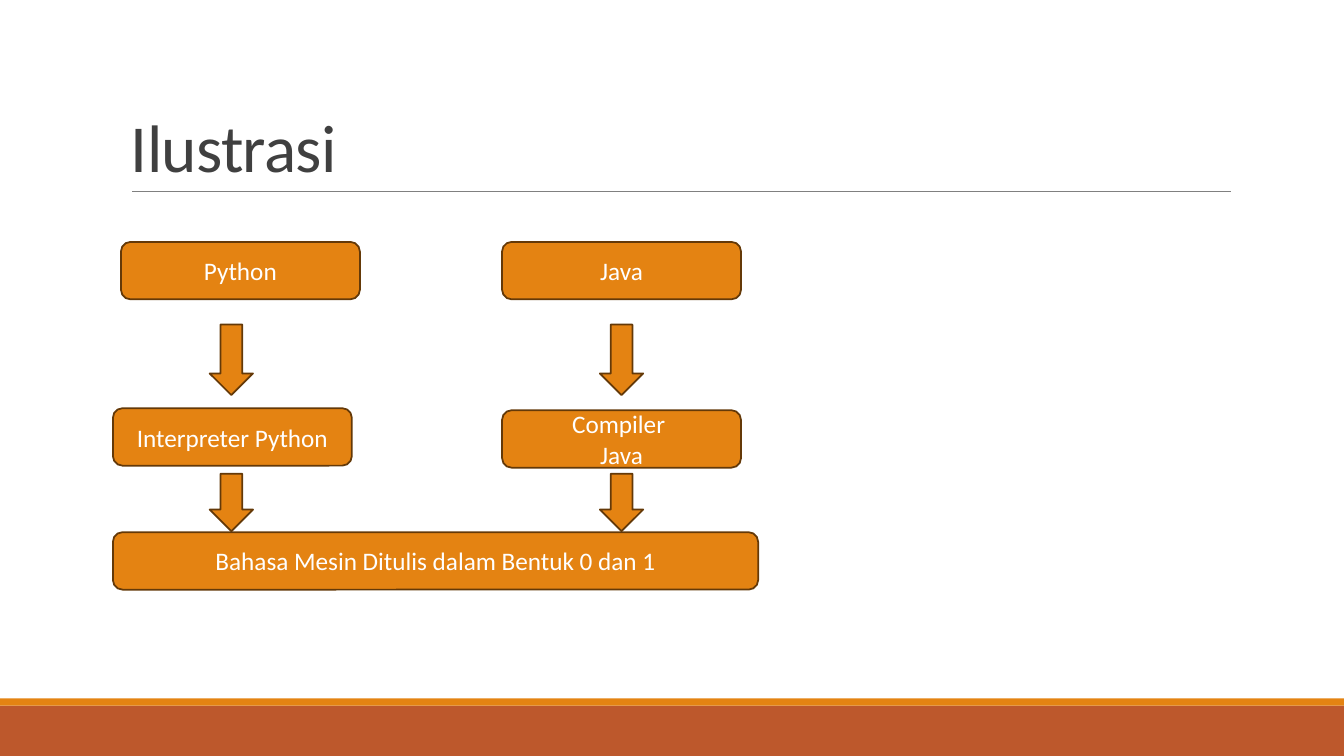
from pptx import Presentation
from pptx.dml.color import RGBColor
from pptx.enum.shapes import MSO_CONNECTOR, MSO_SHAPE
from pptx.enum.text import MSO_ANCHOR, PP_ALIGN
from pptx.oxml.ns import qn
from pptx.util import Inches, Pt
from lxml.etree import SubElement

WHITE = RGBColor(0xFF, 0xFF, 0xFF)
ORANGE = RGBColor(0xE4, 0x83, 0x12)
RUST = RGBColor(0xBD, 0x58, 0x2C)
BROWN = RGBColor(0x64, 0x39, 0x08)
GRAY = RGBColor(0x80, 0x80, 0x80)
DARK_GRAY = RGBColor(0x40, 0x40, 0x40)
FONT = "Calibri"
BOX_WIDTH = 2.37
BOX_HEIGHT = 0.57
ARROW_WIDTH = 0.43


def add_run(paragraph, text, size, color):
    run = paragraph.add_run()
    run.text = text
    run.font.name = FONT
    run.font.size = Pt(size)
    run.font.color.rgb = color
    return run


def add_filled_shape(slide, kind, left, top, width, height, fill, line=None):
    shape = slide.shapes.add_shape(
        kind, Inches(left), Inches(top), Inches(width), Inches(height)
    )
    shape.shadow.inherit = False
    shape.fill.solid()
    shape.fill.fore_color.rgb = fill
    if line is None:
        shape.line.fill.background()
    else:
        shape.line.color.rgb = line
        shape.line.width = Pt(1.25)
    return shape


def add_box(slide, left, top, lines, width=BOX_WIDTH):
    shape = add_filled_shape(
        slide, MSO_SHAPE.ROUNDED_RECTANGLE, left, top, width, BOX_HEIGHT, ORANGE, BROWN
    )
    frame = shape.text_frame
    frame.word_wrap = True
    frame.vertical_anchor = MSO_ANCHOR.MIDDLE
    for index, line in enumerate(lines):
        paragraph = frame.add_paragraph() if index else frame.paragraphs[0]
        paragraph.alignment = PP_ALIGN.CENTER
        add_run(paragraph, line, 18, WHITE)


def add_arrow(slide, left, top, height):
    add_filled_shape(
        slide, MSO_SHAPE.DOWN_ARROW, left, top, ARROW_WIDTH, height, ORANGE, BROWN
    )


def add_rule(slide, left, right, top):
    connector = slide.shapes.add_connector(
        MSO_CONNECTOR.STRAIGHT, Inches(left), Inches(top), Inches(right), Inches(top)
    )
    connector.line.color.rgb = GRAY
    connector.line.width = Pt(0.5)
    SubElement(connector.element.spPr, qn("a:effectLst"))


def add_title(slide, text):
    box = slide.shapes.add_textbox(Inches(1.2), Inches(0.31), Inches(11), Inches(1.59))
    frame = box.text_frame
    frame.word_wrap = True
    frame.vertical_anchor = MSO_ANCHOR.BOTTOM
    paragraph = frame.paragraphs[0]
    paragraph.line_spacing = 0.85
    run = add_run(paragraph, text, 48, DARK_GRAY)
    run.font._element.set("spc", "-50")


def main():
    presentation = Presentation()
    presentation.slide_width = Inches(13.33)
    presentation.slide_height = Inches(7.5)
    slide = presentation.slides.add_slide(presentation.slide_layouts[6])

    add_filled_shape(slide, MSO_SHAPE.RECTANGLE, 0, 7, 13.33, 0.5, RUST)
    add_filled_shape(slide, MSO_SHAPE.RECTANGLE, 0, 6.93, 13.33, 0.07, ORANGE)
    add_rule(slide, 1.31, 12.21, 1.9)
    add_title(slide, "Ilustrasi")

    add_box(slide, 1.2, 2.4, ["Python"])
    add_box(slide, 4.98, 2.4, ["Java"])
    add_box(slide, 1.12, 4.05, ["Interpreter Python"])
    add_box(slide, 4.98, 4.07, ["Compiler ", "Java"])
    add_box(slide, 1.12, 5.28, ["Bahasa Mesin Ditulis dalam Bentuk 0 dan 1"], 6.4)
    for left in (2.08, 5.95):
        add_arrow(slide, left, 3.22, 0.7)
        add_arrow(slide, left, 4.7, 0.57)

    presentation.save("out.pptx")


if __name__ == "__main__":
    main()
